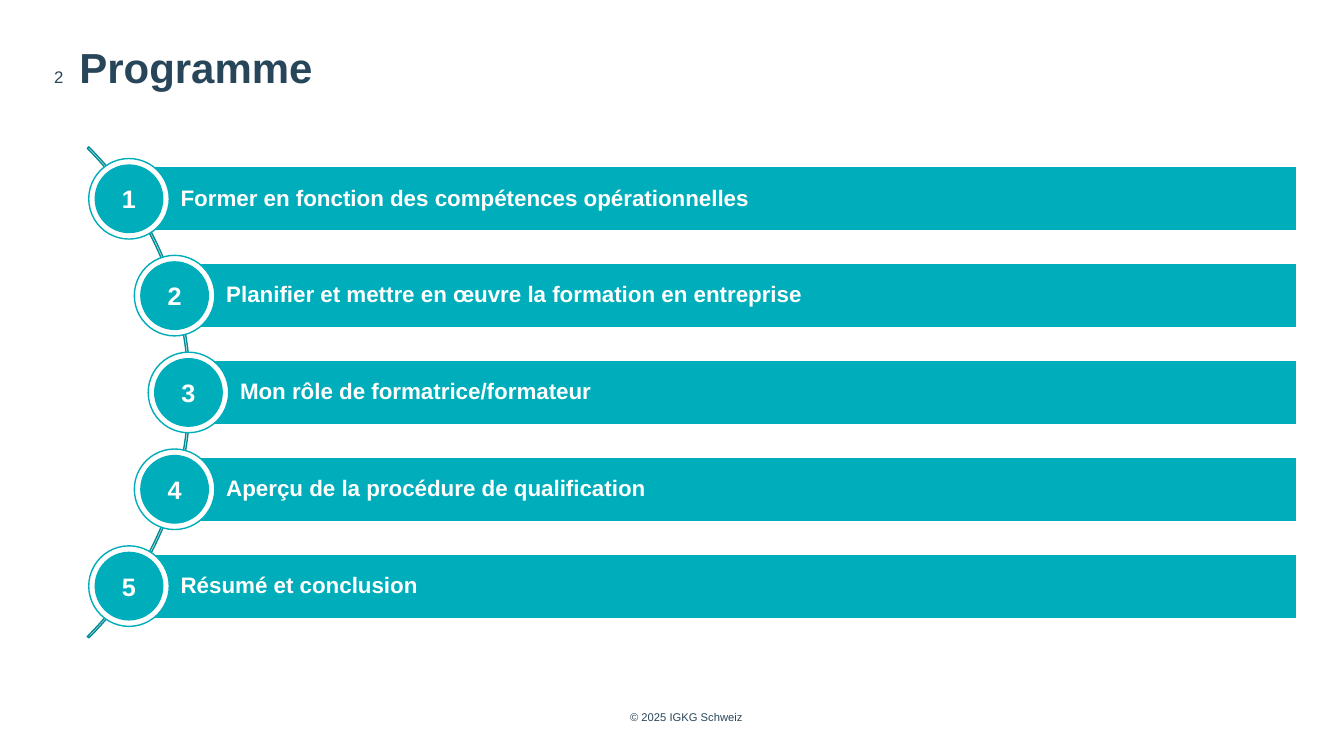
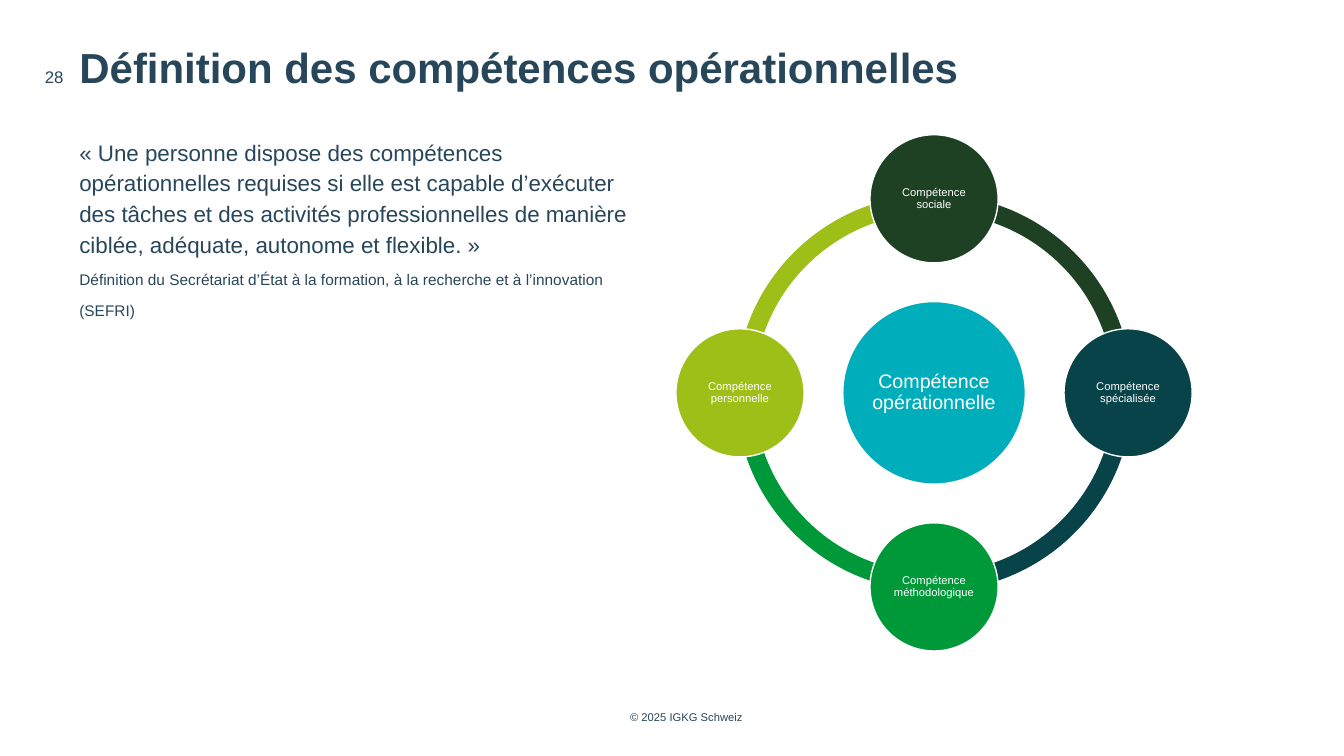
from math import cos, pi, sin, sqrt

from pptx import Presentation
from pptx.dml.color import RGBColor
from pptx.enum.shapes import MSO_SHAPE
from pptx.enum.text import MSO_ANCHOR, MSO_AUTO_SIZE, PP_ALIGN
from pptx.util import Cm, Pt

ARC, OVAL, RECT = MSO_SHAPE.BLOCK_ARC, MSO_SHAPE.OVAL, MSO_SHAPE.RECTANGLE
LEFT, MID, RIGHT = PP_ALIGN.LEFT, PP_ALIGN.CENTER, PP_ALIGN.RIGHT
TOP, CENTER, BOTTOM = MSO_ANCHOR.TOP, MSO_ANCHOR.MIDDLE, MSO_ANCHOR.BOTTOM

FONT = "Arial"
COLORS = {
    "ink": "28465A", "white": "FFFFFF", "teal": "00ADBA", "line": "008B95",
    "forest": "1E4124", "petrol": "074349", "green": "00993A", "lime": "9DBF17",
}
FOOTER = "© 2025 IGKG Schweiz"

AGENDA = {
    "title": "Programme",
    "page": 2,
    "steps": [
        "Former en fonction des compétences opérationnelles",
        "Planifier et mettre en œuvre la formation en entreprise",
        "Mon rôle de formatrice/formateur",
        "Aperçu de la procédure de qualification",
        "Résumé et conclusion",
    ],
}
SKILLS = {
    "title": "Définition des compétences opérationnelles",
    "page": 28,
    "quote": [
        ("« Une personne dispose des compétences opérationnelles requises si "
         "elle est capable d’exécuter des tâches et des activités "
         "professionnelles de manière ciblée, adéquate, autonome et "
         "flexible. »", 16),
        ("Définition du Secrétariat d’État à la formation, à la recherche "
         "et à l’innovation (SEFRI)", 11),
    ],
    "core": "Compétence opérationnelle",
    # clockwise from the top
    "ring": [
        ("Compétence sociale", "forest"),
        ("Compétence spécialisée", "petrol"),
        ("Compétence méthodologique", "green"),
        ("Compétence personnelle", "lime"),
    ],
}


def rgb(name):
    return RGBColor.from_string(COLORS[name])


def write(shape, paras, color="ink", bold=False, align=LEFT, anchor=TOP,
          lead=None, pad=(0, 0, 0, 0)):
    """Fill a shape with (text, size) paragraphs; pad is in cm."""
    frame = shape.text_frame
    frame.word_wrap = True
    frame.auto_size = MSO_AUTO_SIZE.NONE
    frame.vertical_anchor = anchor
    (frame.margin_left, frame.margin_top,
     frame.margin_right, frame.margin_bottom) = map(Cm, pad)
    frame.text = "\n".join(text for text, size in paras)
    for para, (text, size) in zip(frame.paragraphs, paras):
        para.alignment = align
        para.line_spacing = lead
        font = para.runs[0].font
        font.name, font.size, font.bold = FONT, Pt(size), bold
        font.color.rgb = rgb(color)


def text_box(slide, box, paras, **style):
    write(slide.shapes.add_textbox(*map(Cm, box)), paras, **style)


def draw(slide, kind, box, fill=None, line=None):
    shape = slide.shapes.add_shape(kind, *map(Cm, box))
    shape.shadow.inherit = False
    if fill:
        shape.fill.solid()
        shape.fill.fore_color.rgb = rgb(fill)
    else:
        shape.fill.background()
    if line:
        shape.line.color.rgb = rgb(line)
        shape.line.width = Pt(1)
    else:
        shape.line.fill.background()
    return shape


def square(x, y, size):
    """Box of a square centred on x, y."""
    return x - size / 2, y - size / 2, size, size


def draw_arc(slide, x, y, size, start, end, thick, **style):
    """Block arc, clockwise from start to end in degrees."""
    arc = draw(slide, ARC, square(x, y, size), **style)
    for i, value in enumerate((start * 0.6, end * 0.6, thick)):
        arc.adjustments[i] = value


def new_slide(deck, data):
    """Slide with title, page number and footer."""
    slide = deck.slides.add_slide(deck.slide_layouts[5])
    title = slide.shapes.title
    title.left, title.top, title.width, title.height = map(
        Cm, (2, 1.19, 30.86, 1.6))
    write(title, [(data["title"], 30)], bold=True, lead=Pt(32))
    text_box(slide, (0, 1.65, 1.6, 0.53), [(str(data["page"]), 12)],
             align=RIGHT, anchor=BOTTOM, lead=Pt(18))
    text_box(slide, (15.37, 17.91, 3.86, 0.33), [(FOOTER, 8)], align=MID)
    return slide


def add_agenda(deck):
    slide = new_slide(deck, AGENDA)
    x, y, radius, pitch = -3.95, 9.89, 8.7, 2.44
    edge, high = 32.69, 1.62
    draw_arc(slide, x, y, 17.5, 315, 45, 0.003, line="line")
    steps = AGENDA["steps"]
    for i, step in enumerate(steps):
        drop = (i - (len(steps) - 1) / 2) * pitch
        cx, cy = x + sqrt(radius ** 2 - drop ** 2), y + drop
        bar = draw(slide, RECT, (cx, cy - high / 2, edge - cx, high),
                   "teal", "white")
        write(bar, [(step, 16)], "white", True, anchor=CENTER, lead=0.9,
              pad=(1.3, 0.1, 0.1, 0.1))
        draw(slide, OVAL, square(cx, cy, 2.03), "white", "teal")
        disc = draw(slide, OVAL, square(cx, cy, 1.7), "teal", "teal")
        write(disc, [(str(i + 1), 18)], "white", True, MID, CENTER)


def add_disc(slide, box, text, size, fill):
    disc = draw(slide, OVAL, box, fill, "white")
    write(disc, [(text, size)], "white", align=MID, anchor=CENTER, lead=0.9,
          pad=(0.03,) * 4)


def add_skills(deck):
    slide = new_slide(deck, SKILLS)
    text_box(slide, (2, 3.4, 13.97, 13), SKILLS["quote"], lead=Pt(22))
    x, y, orbit = 23.54, 9.9, 4.89
    ring = SKILLS["ring"]
    turn = 360 / len(ring)
    angles = [(270 + i * turn) % 360 for i in range(len(ring))]
    for angle, (text, fill) in zip(angles, ring):
        draw_arc(slide, x, y, 10, angle, (angle + turn) % 360, 0.046,
                 fill=fill)
    add_disc(slide, square(x, y, 4.6), SKILLS["core"], 14, "teal")
    for angle, (text, fill) in zip(angles, ring):
        rad = angle * pi / 180
        spot = square(x + orbit * cos(rad), y + orbit * sin(rad), 3.23)
        add_disc(slide, spot, text, 8, fill)


def main():
    deck = Presentation()
    deck.slide_width, deck.slide_height = Cm(33.87), Cm(19.05)
    add_agenda(deck)
    add_skills(deck)
    deck.save("out.pptx")


if __name__ == "__main__":
    main()
